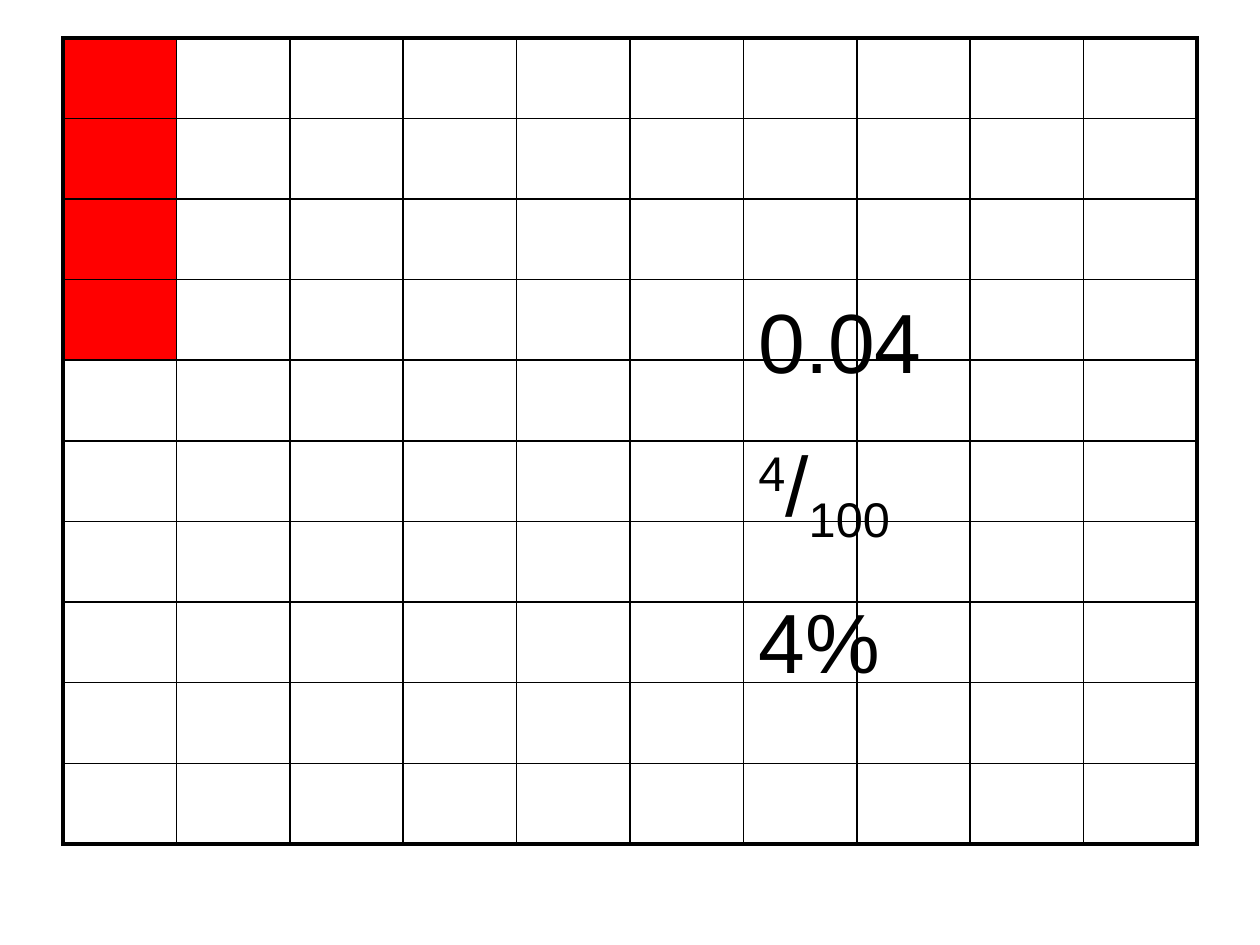
import dataclasses

import pptx
import pptx.dml.color
import pptx.enum.text
import pptx.oxml.ns
import pptx.oxml.xmlchemy
import pptx.util
from lxml import etree

COLORS = {"ink": "000000", "shaded": "FF0000"}
GRID_SIZE = 10
SHADED_CELLS = 4
CELL_WIDTH = 0.9
CELL_HEIGHT = 0.64
GRID_LEFT = 0.5
GRID_TOP = 0.3
INNER_LINE = 1
OUTER_LINE = 2.25


@dataclasses.dataclass(frozen=True)
class Piece:
    text: str
    baseline: int = 0


VALUES = (
    (Piece("0.04"),),
    (Piece("4", 30), Piece("/"), Piece("100", -25)),
    (Piece("4%"),),
)


def qualified(tag: str) -> str:
    return pptx.oxml.ns.qn(tag)


def color(name: str) -> pptx.dml.color.RGBColor:
    return pptx.dml.color.RGBColor.from_string(COLORS[name])


def add_border(cell, side: str, outer: bool) -> None:
    width = pptx.util.Pt(OUTER_LINE if outer else INNER_LINE)
    properties = cell._tc.get_or_add_tcPr()
    line = etree.SubElement(properties, qualified(f"a:ln{side}"), w=str(width))
    fill = etree.SubElement(line, qualified("a:solidFill"))
    etree.SubElement(fill, qualified("a:srgbClr"), val=COLORS["ink"])


def format_cell(cell, row: int, column: int) -> None:
    last = GRID_SIZE - 1
    add_border(cell, "L", column == 0)
    add_border(cell, "R", column == last)
    add_border(cell, "T", row == 0)
    add_border(cell, "B", row == last)
    if column * GRID_SIZE + row < SHADED_CELLS:
        cell.fill.solid()
        cell.fill.fore_color.rgb = color("shaded")
    else:
        cell.fill.background()


def add_hundred_grid(slide) -> None:
    table = slide.shapes.add_table(
        GRID_SIZE,
        GRID_SIZE,
        pptx.util.Inches(GRID_LEFT),
        pptx.util.Inches(GRID_TOP),
        pptx.util.Inches(CELL_WIDTH * GRID_SIZE),
        pptx.util.Inches(CELL_HEIGHT * GRID_SIZE),
    ).table
    table.first_row = False
    table.horz_banding = False
    for row in range(GRID_SIZE):
        for column in range(GRID_SIZE):
            format_cell(table.cell(row, column), row, column)


def add_piece(paragraph, piece: Piece) -> None:
    run = paragraph.add_run()
    run.text = piece.text
    run.font.name = "Arial"
    run.font.size = pptx.util.Pt(48)
    run.font.color.rgb = color("ink")
    if piece.baseline:
        run.font._element.set("baseline", str(piece.baseline * 1000))


def set_space_before(paragraph, percent: int) -> None:
    properties = paragraph._p.get_or_add_pPr()
    spacing = etree.SubElement(properties, qualified("a:spcBef"))
    etree.SubElement(spacing, qualified("a:spcPct"), val=str(percent * 1000))


def add_values(slide) -> None:
    shape = slide.shapes.add_textbox(
        pptx.util.Inches(5.92),
        pptx.util.Inches(2.25),
        pptx.util.Inches(3.08),
        pptx.util.Inches(3.3),
    )
    text_frame = shape.text_frame
    text_frame.word_wrap = True
    text_frame.auto_size = pptx.enum.text.MSO_AUTO_SIZE.SHAPE_TO_FIT_TEXT
    for index, pieces in enumerate(VALUES):
        paragraph = text_frame.add_paragraph() if index else text_frame.paragraphs[0]
        set_space_before(paragraph, 50)
        for piece in pieces:
            add_piece(paragraph, piece)


def main() -> None:
    presentation = pptx.Presentation()
    presentation.slide_width = pptx.util.Inches(10)
    presentation.slide_height = pptx.util.Inches(7.5)
    slide = presentation.slides.add_slide(presentation.slide_layouts[6])
    add_hundred_grid(slide)
    add_values(slide)
    presentation.save("out.pptx")


if __name__ == "__main__":
    main()
